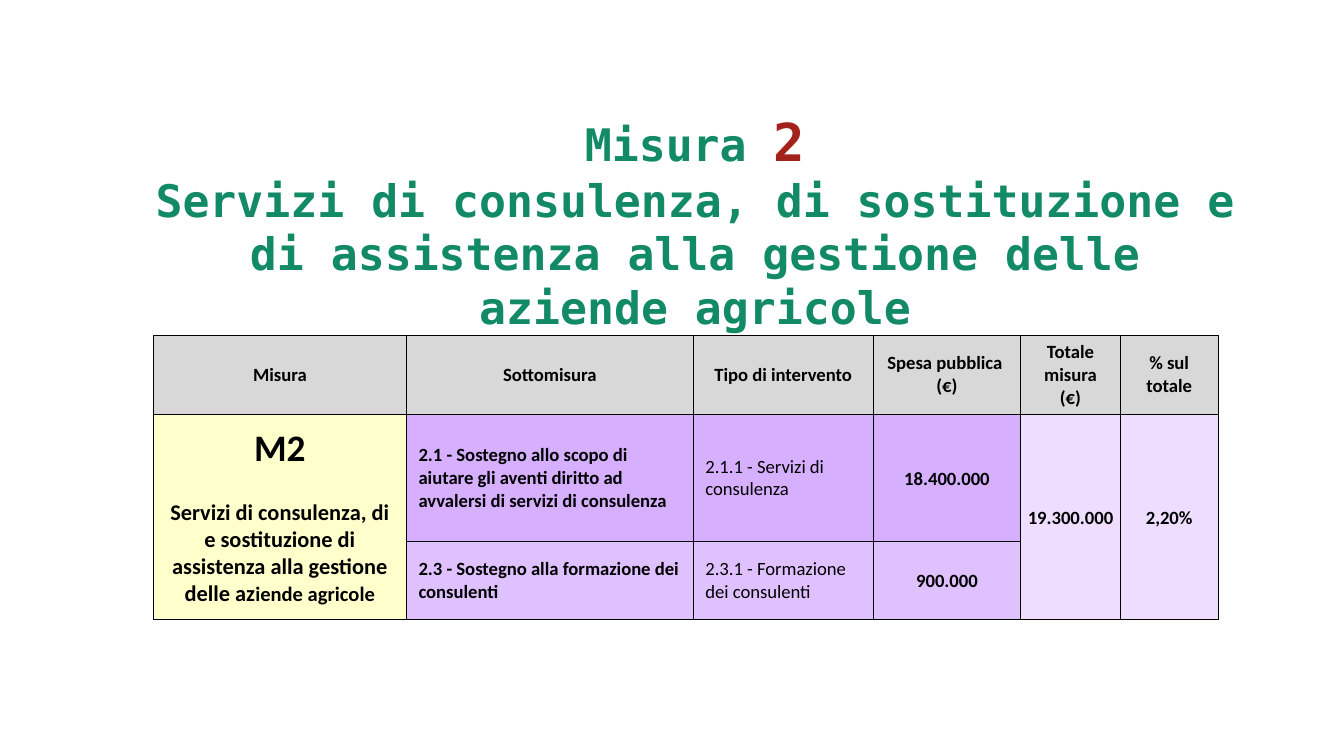
from dataclasses import dataclass

import pptx
import pptx.dml.color
import pptx.enum.text
import pptx.oxml
import pptx.oxml.ns
import pptx.table
import pptx.text.text
import pptx.util
from pptx.util import Cm

CENTER = pptx.enum.text.PP_ALIGN.CENTER
LEFT = pptx.enum.text.PP_ALIGN.LEFT
MIDDLE = pptx.enum.text.MSO_ANCHOR.MIDDLE

BLACK, GREEN, RED = "000000", "128A66", "A3231C"
GREY, YELLOW = "D8D8D8", "FFFFCC"
VIOLET, LILAC, PALE_LILAC = "D7AFFF", "E0C1FF", "EEDDFF"
WIDE_MARGINS = (0.23, 0.11, 0.23, 0.11)
NARROW_MARGINS = (0.03, 0.03, 0.03, 0)


@dataclass
class Run:
    text: str
    size: float = 10
    bold: bool = True
    color: str = BLACK
    font: str = "Calibri"


@dataclass
class Paragraph:
    runs: list[Run]
    align: pptx.enum.text.PP_ALIGN = CENTER
    space_before: float = 0


@dataclass
class Entry:
    row: int
    column: int
    paragraphs: list[Paragraph]
    fill: str
    margins: tuple[float, ...] = WIDE_MARGINS
    row_span: int = 1


def rgb(color: str) -> pptx.dml.color.RGBColor:
    return pptx.dml.color.RGBColor.from_string(color)


def write(frame: pptx.text.text.TextFrame, paragraphs: list[Paragraph]) -> None:
    for index, content in enumerate(paragraphs):
        line = frame.add_paragraph() if index else frame.paragraphs[0]
        line.alignment = content.align
        if content.space_before:
            line.space_before = pptx.util.Pt(content.space_before)
        for part in content.runs:
            run = line.add_run()
            run.text = part.text
            run.font.size = pptx.util.Pt(part.size)
            run.font.bold = part.bold
            run.font.name = part.font
            run.font.color.rgb = rgb(part.color)


def outline(cell: pptx.table._Cell) -> None:
    properties = cell._tc.get_or_add_tcPr()
    for side in ("lnL", "lnR", "lnT", "lnB"):
        properties.append(pptx.oxml.parse_xml(
            f'<a:{side} {pptx.oxml.ns.nsdecls("a")} w="6350"><a:solidFill>'
            f'<a:srgbClr val="{BLACK}"/></a:solidFill></a:{side}>'))


def draw_entry(table: pptx.table.Table, entry: Entry) -> None:
    cell = table.cell(entry.row, entry.column)
    last_row = entry.row + entry.row_span - 1
    if entry.row_span > 1:
        cell.merge(table.cell(last_row, entry.column))
    for row in range(entry.row, last_row + 1):
        part = table.cell(row, entry.column)
        outline(part)
        part.fill.solid()
        part.fill.fore_color.rgb = rgb(entry.fill)
    cell.vertical_anchor = MIDDLE
    (cell.margin_left, cell.margin_top,
     cell.margin_right, cell.margin_bottom) = map(Cm, entry.margins)
    write(cell.text_frame, entry.paragraphs)


def submeasure(row: int, name: str, intervention: str, spending: str, fill: str) -> list[Entry]:
    return [
        Entry(row, 1, [Paragraph([Run(name)], LEFT)], fill),
        Entry(row, 2, [Paragraph([Run(intervention, bold=False)], LEFT)], fill),
        Entry(row, 3, [Paragraph([Run(spending)])], fill, NARROW_MARGINS),
    ]


def title_run(text: str, size: float = 24, color: str = GREEN) -> Run:
    return Run(text, size, color=color, font="DejaVu Sans Mono")


def draw_title(title: pptx.shapes.base.BaseShape) -> None:
    title.left, title.top, title.width, title.height = map(Cm, (2.49, 1.96, 21.29, 3.48))
    frame = title.text_frame
    frame.word_wrap = True
    frame.auto_size = pptx.enum.text.MSO_AUTO_SIZE.SHAPE_TO_FIT_TEXT
    frame.vertical_anchor = pptx.enum.text.MSO_ANCHOR.TOP
    (frame.margin_left, frame.margin_top,
     frame.margin_right, frame.margin_bottom) = map(Cm, WIDE_MARGINS)
    write(frame, [
        Paragraph([title_run("Misura "), title_run("2", 28, RED)]),
        Paragraph([title_run("Servizi di consulenza, di sostituzione e di assistenza "
                             "alla gestione delle aziende agricole")]),
    ])


HEADINGS = [["Misura"], ["Sottomisura"], ["Tipo di intervento"],
            ["Spesa pubblica ", "(€)"], ["Totale misura (€)"], ["% sul totale"]]
COLUMN_WIDTHS = (4.78, 5.42, 3.4, 2.79, 1.88, 1.85)
ROW_HEIGHTS = (1.47, 2.41, 1.47)

ENTRIES = [
    *(Entry(0, column, [Paragraph([Run(line)]) for line in lines], GREY)
      for column, lines in enumerate(HEADINGS)),
    Entry(1, 0, [
        Paragraph([Run("M2", 20)]),
        Paragraph([Run("Servizi di consulenza, di e sostituzione di assistenza "
                       "alla gestione delle az", 12),
                   Run("iende agricole", 11)], space_before=14.5),
    ], YELLOW, row_span=2),
    *submeasure(1, "2.1 - Sostegno allo scopo di aiutare gli aventi diritto ad "
                   "avvalersi di servizi di consulenza",
                "2.1.1 - Servizi di consulenza", "18.400.000", VIOLET),
    *submeasure(2, "2.3 - Sostegno alla formazione dei consulenti",
                "2.3.1 - Formazione dei consulenti", "900.000", LILAC),
    *(Entry(1, column, [Paragraph([Run(total)])], PALE_LILAC, NARROW_MARGINS, 2)
      for column, total in ((4, "19.300.000"), (5, "2,20%"))),
]


def main() -> None:
    deck = pptx.Presentation()
    deck.slide_width, deck.slide_height = Cm(25.4), Cm(14.29)
    slide = deck.slides.add_slide(deck.slide_layouts[5])
    draw_title(slide.shapes.title)

    spending = slide.shapes.add_table(
        len(ROW_HEIGHTS), len(COLUMN_WIDTHS), Cm(2.9), Cm(6.34),
        Cm(sum(COLUMN_WIDTHS)), Cm(sum(ROW_HEIGHTS))).table
    spending.first_row = False
    spending.horz_banding = False
    for column, width in zip(spending.columns, COLUMN_WIDTHS):
        column.width = Cm(width)
    for row, height in zip(spending.rows, ROW_HEIGHTS):
        row.height = Cm(height)
    for entry in ENTRIES:
        draw_entry(spending, entry)

    deck.save("out.pptx")


if __name__ == "__main__":
    main()
